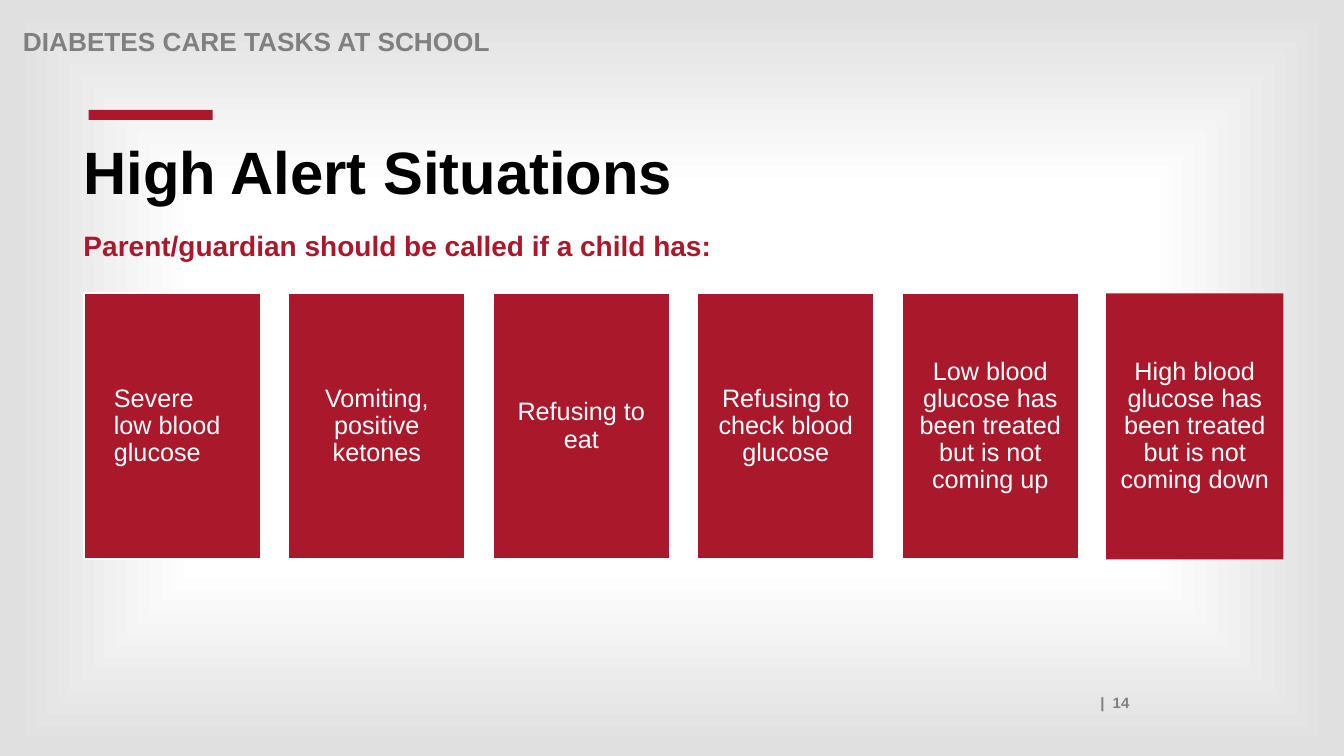
from lxml.etree import fromstring
from pptx import Presentation
from pptx.dml.color import RGBColor
from pptx.enum.shapes import MSO_SHAPE
from pptx.enum.text import MSO_ANCHOR, MSO_AUTO_SIZE, PP_ALIGN
from pptx.util import Inches, Pt

COLORS = {"red": "AA182C", "gray": "808080", "white": "FFFFFF", "black": "000000", "edge": "E0E0E0"}
HEADER = "DIABETES CARE TASKS AT SCHOOL"
TITLE = "High Alert Situations"
SUBTITLE = "Parent/guardian should be called if a child has:"
PAGE_NUMBER = "|  14"
ALERTS = [
    "Severe low blood glucose",
    "Vomiting, positive ketones",
    "Refusing to eat",
    "Refusing to check blood glucose",
    "Low blood glucose has been treated but is not coming up",
    "High blood glucose has been treated but is not coming down",
]
GRADIENT_STOPS = [(12, "white"), (50, "white"), (98, "edge")]
FIRST_LEFT, LAST_LEFT = 0.83, 10.97
CARD_TOP, CARD_WIDTH, CARD_HEIGHT = 2.91, 1.76, 2.64


def color(name):
    return RGBColor.from_string(COLORS[name])


def write(shape, text, size, tint, bold=False, align=PP_ALIGN.LEFT,
          anchor=MSO_ANCHOR.TOP, spacing=0.9, side=0.1, edge=0.05):
    frame = shape.text_frame
    frame.word_wrap = True
    frame.auto_size = MSO_AUTO_SIZE.NONE
    frame.vertical_anchor = anchor
    frame.margin_left = frame.margin_right = Inches(side)
    frame.margin_top = frame.margin_bottom = Inches(edge)
    para = frame.paragraphs[0]
    para.alignment = align
    para.line_spacing = spacing
    para.space_before = Pt(0)
    span = para.add_run()
    span.text = text
    span.font.name = "Arial"
    span.font.size = Pt(size)
    span.font.bold = bold
    span.font.color.rgb = color(tint)


def add_text(page, left, top, width, height, text, **style):
    box = page.shapes.add_textbox(Inches(left), Inches(top), Inches(width), Inches(height))
    write(box, text, **style)


def add_block(page, left, top, width, height):
    block = page.shapes.add_shape(
        MSO_SHAPE.RECTANGLE, Inches(left), Inches(top), Inches(width), Inches(height))
    block.shadow.inherit = False
    block.fill.solid()
    block.fill.fore_color.rgb = color("red")
    block.line.fill.background()
    return block


def paint_background(page):
    stops = "".join(
        f'<a:gs pos="{share * 1000}"><a:srgbClr val="{COLORS[name]}"/></a:gs>'
        for share, name in GRADIENT_STOPS)
    background = fromstring(
        '<p:bg xmlns:p="http://schemas.openxmlformats.org/presentationml/2006/main" '
        'xmlns:a="http://schemas.openxmlformats.org/drawingml/2006/main"><p:bgPr>'
        f'<a:gradFill rotWithShape="1"><a:gsLst>{stops}</a:gsLst><a:path path="shape">'
        '<a:fillToRect l="50000" t="50000" r="50000" b="50000"/></a:path></a:gradFill>'
        '<a:effectLst/></p:bgPr></p:bg>')
    page.element.cSld.insert(0, background)


def main():
    deck = Presentation()
    deck.slide_width, deck.slide_height = Inches(13.33), Inches(7.5)
    page = deck.slides.add_slide(deck.slide_layouts[5])
    paint_background(page)

    title = page.shapes.title
    title.left, title.top = Inches(0.73), Inches(1.37)
    title.width, title.height = Inches(11.03), Inches(0.85)
    write(title, TITLE, size=42.7, tint="black", bold=True)

    add_text(page, 1.21, 6.83, 10.09, 0.28, PAGE_NUMBER, size=10.7, tint="gray",
             bold=True, align=PP_ALIGN.RIGHT, spacing=1.0)
    add_text(page, 0.13, 0.24, 11, 0.28, HEADER, size=18.7, tint="gray", bold=True)
    add_block(page, 0.88, 1.09, 1.23, 0.1)
    add_text(page, 0.73, 2.22, 8.83, 0.51, SUBTITLE, size=20, tint="red", bold=True, spacing=1.0)

    last = len(ALERTS) - 1
    pitch = (LAST_LEFT - FIRST_LEFT) / last
    for index, alert in enumerate(ALERTS):
        card = add_block(page, FIRST_LEFT + index * pitch, CARD_TOP, CARD_WIDTH, CARD_HEIGHT)
        if index < last:
            card.line.color.rgb = color("white")
            card.line.width = Pt(1.5)
        write(card, alert, size=18, tint="white", anchor=MSO_ANCHOR.MIDDLE,
              align=PP_ALIGN.CENTER if index else PP_ALIGN.LEFT,
              side=0.07 if index else 0.3, edge=0.07)

    deck.save("out.pptx")


if __name__ == "__main__":
    main()
